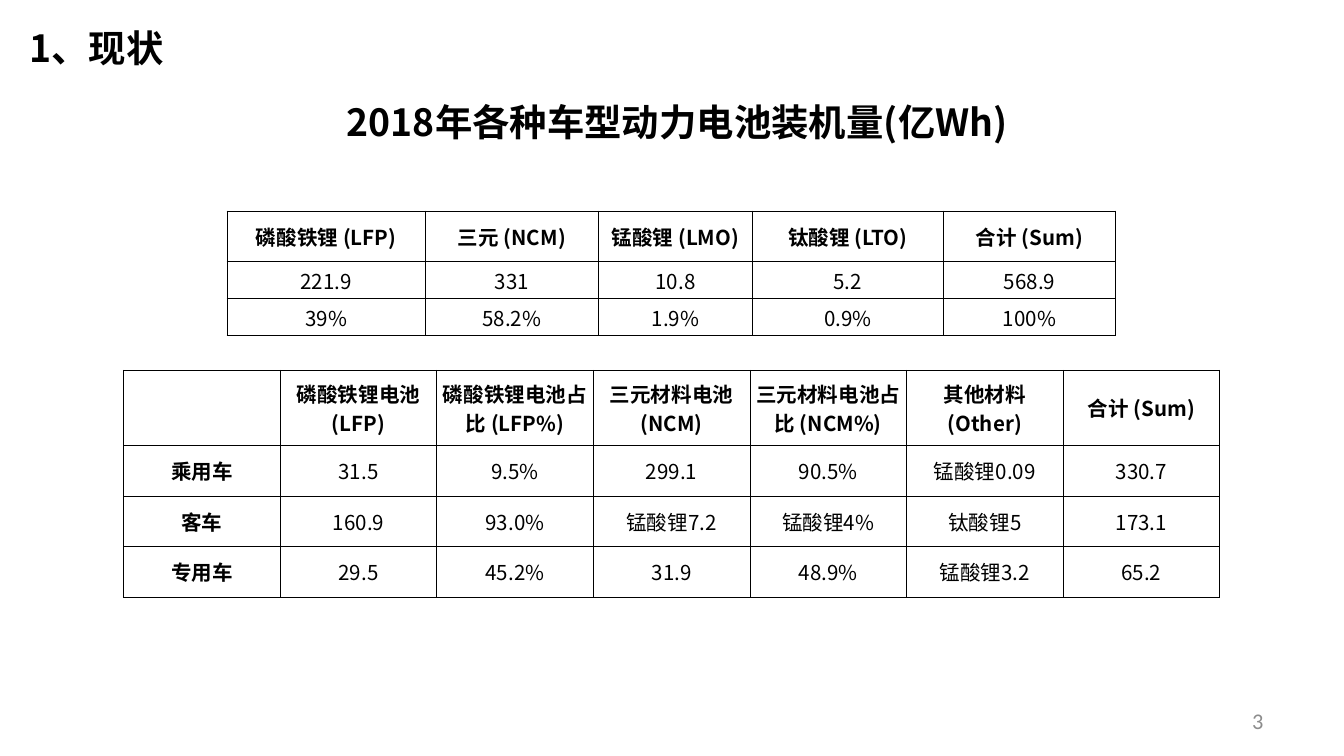
from lxml import etree
from pptx import Presentation
from pptx import util as u
from pptx.dml import color
from pptx.enum import text
from pptx.oxml import ns

COLUMNS, ROWS = 100, 56.25
BLACK, GREY = "000000", "8C8C8C"
CENTER, LEFT, RIGHT = text.PP_ALIGN.CENTER, text.PP_ALIGN.LEFT, text.PP_ALIGN.RIGHT

CHEMISTRY_TOTALS = [
    ["磷酸铁锂 (LFP)", "三元 (NCM)", "锰酸锂 (LMO)", "钛酸锂 (LTO)", "合计 (Sum)"],
    ["221.9", "331", "10.8", "5.2", "568.9"],
    ["39%", "58.2%", "1.9%", "0.9%", "100%"],
]
VEHICLE_BREAKDOWN = [
    ["", "磷酸铁锂电池 (LFP)", "磷酸铁锂电池占比 (LFP%)", "三元材料电池 (NCM)",
     "三元材料电池占比 (NCM%)", "其他材料 (Other)", "合计 (Sum)"],
    ["乘用车", "31.5", "9.5%", "299.1", "90.5%", "锰酸锂0.09", "330.7"],
    ["客车", "160.9", "93.0%", "锰酸锂7.2", "锰酸锂4%", "钛酸锂5", "173.1"],
    ["专用车", "29.5", "45.2%", "31.9", "48.9%", "锰酸锂3.2", "65.2"],
]


def rgb(value):
    return color.RGBColor.from_string(value)


def grid(units):
    return u.Inches(units / 10)


class BatterySlide:
    """Draws text and tables on a page ruled into 100 columns by 56.25 rows."""

    font = "Noto Sans CJK SC"
    table_size = 11

    def __init__(self, deck):
        self.page = deck.slides.add_slide(deck.slide_layouts[6])

    def style(self, para, size, bold=False, align=LEFT, hue=BLACK, font=None):
        para.alignment = align
        for span in para.runs:
            span.font.size, span.font.bold = u.Pt(size), bold
            span.font.name = font or self.font
            span.font.color.rgb = rgb(hue)
            east_asian = etree.SubElement(span.font._element, ns.qn("a:ea"))
            east_asian.set("typeface", font or self.font)

    def text(self, words, left, top, width, height, size, anchor=text.MSO_ANCHOR.TOP, **look):
        box = self.page.shapes.add_textbox(*map(grid, (left, top, width, height)))
        frame = box.text_frame
        frame.word_wrap, frame.vertical_anchor = True, anchor
        frame.text = words
        self.style(frame.paragraphs[0], size, **look)

    def border(self, cell):
        properties = cell._tc.get_or_add_tcPr()
        for place, side in enumerate(("lnL", "lnR", "lnT", "lnB")):
            line = etree.Element(ns.qn(f"a:{side}"), w=str(u.Pt(0.5)))
            fill = etree.SubElement(line, ns.qn("a:solidFill"))
            etree.SubElement(fill, ns.qn("a:srgbClr"), val=BLACK)
            properties.insert(place, line)

    def table(self, values, left, top, widths, heights, bold_first_column=False):
        frame = self.page.shapes.add_table(
            len(values), len(values[0]),
            *map(grid, (left, top, sum(widths), sum(heights))))
        table = frame.table
        table.first_row = table.horz_banding = False
        for column, width in zip(table.columns, widths):
            column.width = grid(width)
        for row, height in zip(table.rows, heights):
            row.height = grid(height)
        for row, line in enumerate(values):
            for column, words in enumerate(line):
                cell = table.cell(row, column)
                cell.text = words
                cell.vertical_anchor = text.MSO_ANCHOR.MIDDLE
                cell.margin_left = cell.margin_right = 0
                cell.margin_top = cell.margin_bottom = 0
                cell.fill.background()
                self.border(cell)
                bold = row == 0 or (bold_first_column and column == 0)
                self.style(cell.text_frame.paragraphs[0], self.table_size, bold, CENTER)


def main():
    deck = Presentation()
    deck.slide_width, deck.slide_height = grid(COLUMNS), grid(ROWS)
    slide = BatterySlide(deck)
    slide.table(VEHICLE_BREAKDOWN, 9.2, 27.55, [11.65] * 7, [5.6] + [3.76] * 3,
                bold_first_column=True)
    slide.text("2018年各种车型动力电池装机量(亿Wh)", 5.1, 6.9, 90.6, 4.4, 20,
               bold=True, align=CENTER)
    slide.table(CHEMISTRY_TOTALS, 16.9, 15.7, [14.74, 12.9, 11.45, 14.2, 12.85],
                [3.75, 2.77, 2.77])
    slide.text("3", 71.7, 52.13, 23.3, 3, 12, anchor=text.MSO_ANCHOR.MIDDLE,
               align=RIGHT, hue=GREY, font="Calibri")
    slide.text("1、现状", 1.2, 1.4, 18.9, 4.4, 20, bold=True)
    deck.save("out.pptx")


if __name__ == "__main__":
    main()
